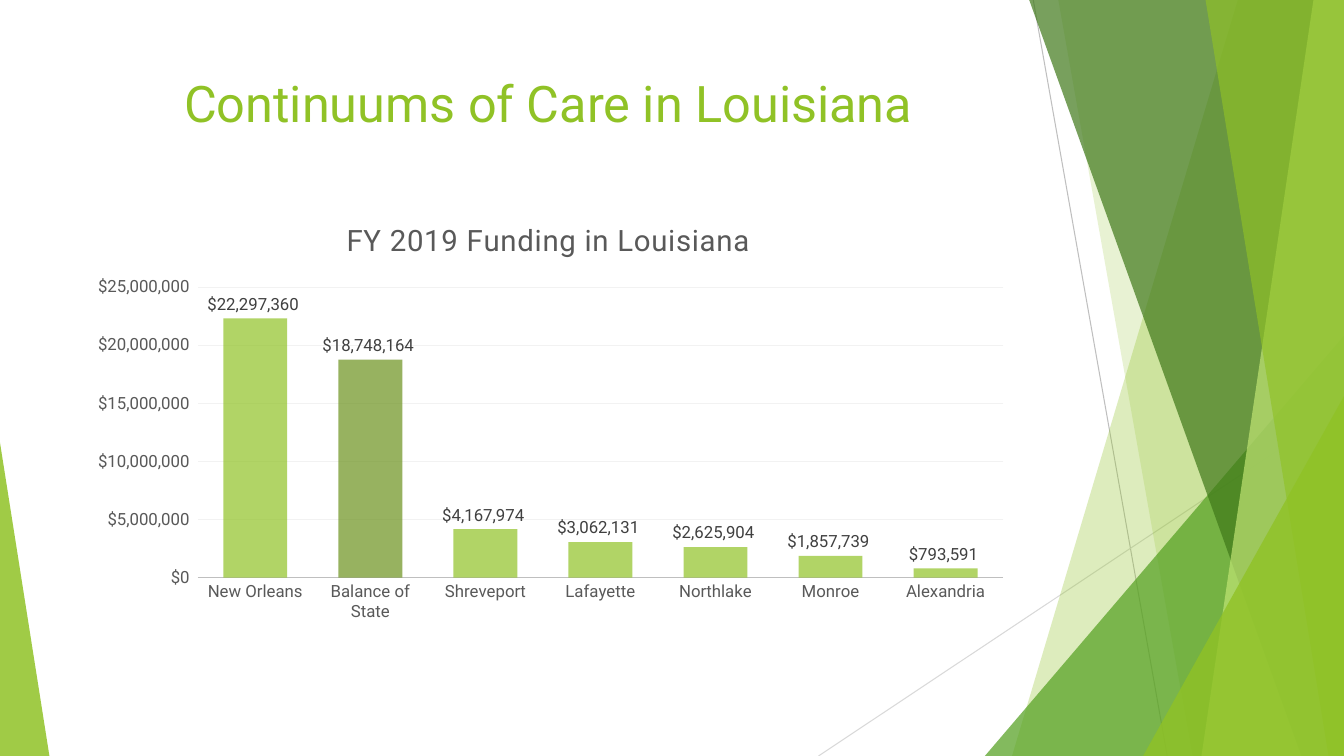
from pptx import Presentation
from pptx.chart.data import CategoryChartData
from pptx.dml.color import RGBColor
from pptx.enum.chart import XL_CHART_TYPE, XL_LABEL_POSITION, XL_TICK_MARK
from pptx.enum.shapes import MSO_CONNECTOR, MSO_SHAPE
from pptx.enum.text import MSO_ANCHOR, PP_ALIGN
from pptx.oxml import parse_xml
from pptx.oxml.ns import nsdecls, qn
from pptx.oxml.xmlchemy import OxmlElement
from pptx.util import Inches, Pt

THEME = dict(
    font="Roboto", title_size=Pt(36), chart_title_size=Pt(21), label_size=Pt(12),
    lime="90C226", pale="C0E474", green="54A021", forest="3F7819", olive="6C921D",
    text="595959", value="404040", axis="BFBFBF", ray="D9D9D9", grid="F2F2F2",
)
MONEY = '"$"#,##0_);[Red]\\("$"#,##0\\)'

prs = Presentation()
prs.slide_width, prs.slide_height = Inches(13.333), Inches(7.5)
s = prs.slides.add_slide(prs.slide_layouts[5])


def at(x, y):
    return int(prs.slide_width * x / 100), int(prs.slide_height * y / 100)


def paint(fill, color, opacity):
    fill.solid()
    fill.fore_color.rgb = RGBColor.from_string(THEME[color])
    alpha = OxmlElement("a:alpha")
    alpha.set("val", str(opacity * 1000))
    fill._xPr.find(qn("a:solidFill"))[0].append(alpha)


rays = [((76.88, 0), (86.85, 100), "axis"), ((100, 53.73), (60.9, 100), "ray")]
for start, end, color in rays:
    ray = s.shapes.add_connector(MSO_CONNECTOR.STRAIGHT, *at(*start), *at(*end))
    ray.line.color.rgb = RGBColor.from_string(THEME[color])
    ray.line.width = Pt(0.75)
    ray._element.spPr.append(OxmlElement("a:effectLst"))

facets = [
    ("sheet", (92.1, 75.3), "lime", 30),
    ("sheet", (78.75, 88.73), "lime", 20),
    ("triangle", (73.28, 44.4, 26.72, 1), "green", 72),
    ("sheet", (76.58, 96.83), "forest", 70),
    ("sheet", (97.73, 89.4), "pale", 70),
    ("sheet", (89.7, 98.85), "lime", 65),
    ("triangle", (85.05, 52.4, 14.95, 1), "lime", 80),
    ("triangle", (0, 58.53, 3.68, 0), "lime", 85),
]
for kind, geometry, color, opacity in facets:
    if kind == "sheet":
        top, bottom = geometry
        fb = s.shapes.build_freeform(*at(top, 0))
        fb.add_line_segments([at(100, 0), at(100, 100), at(bottom, 100)], close=True)
        sp = fb.convert_to_shape()
    else:
        left, top, width, apex = geometry
        sp = s.shapes.add_shape(MSO_SHAPE.ISOSCELES_TRIANGLE, *at(left, top), *at(width, 100 - top))
        sp.adjustments[0] = apex
    paint(sp.fill, color, opacity)
    sp.line.fill.background()
    sp.shadow.inherit = False

title = s.shapes.title
title.left, title.top = at(5.55, 8.93)
title.width, title.height = at(70.5, 19.2)
tf = title.text_frame
tf.text = "Continuums of Care in Louisiana"
tf.vertical_anchor = MSO_ANCHOR.TOP
p = tf.paragraphs[0]
p.alignment = PP_ALIGN.CENTER

funding = {
    "New Orleans": 22297360, "Balance of State": 18748164, "Shreveport": 4167974,
    "Lafayette": 3062131, "Northlake": 2625904, "Monroe": 1857739, "Alexandria": 793591,
}
data = CategoryChartData(number_format=MONEY)
data.categories = list(funding)
data.add_series("Series 1", list(funding.values()))
chart = s.shapes.add_chart(
    XL_CHART_TYPE.COLUMN_CLUSTERED, *at(5.55, 26.67), *at(70.5, 56.53), data).chart
chart.has_legend = False
chart.has_title = True
chart.chart_title.include_in_layout = False
heading = chart.chart_title.text_frame
heading.text = "FY 2019 Funding in Louisiana"
heading_run = heading.paragraphs[0].runs[0]
heading_run.font._rPr.set("spc", "50")

plot = chart.plots[0]
plot.gap_width, plot.overlap, plot.vary_by_categories = 80, 25, False
bars = plot.series[0]
paint(bars.format.fill, "lime", 70)
paint(bars.points[1].format.fill, "olive", 70)
labels = bars.data_labels
label_format = dict(show_value=True, position=XL_LABEL_POSITION.OUTSIDE_END,
                    number_format=MONEY, number_format_is_linked=False)
for name, value in label_format.items():
    setattr(labels, name, value)

cat, val = chart.category_axis, chart.value_axis
for axis in (cat, val):
    axis.major_tick_mark = axis.minor_tick_mark = XL_TICK_MARK.NONE
cat.format.line.color.rgb = RGBColor.from_string(THEME["axis"])
cat.format.line.width = Pt(1.25)
val.format.line.fill.background()
val.minimum_scale, val.maximum_scale, val.major_unit = 0, 25000000, 5000000
val.tick_labels.number_format = MONEY
val.tick_labels.number_format_is_linked = False
grid = val.major_gridlines.format.line
grid.color.rgb = RGBColor.from_string(THEME["grid"])
grid.width = Pt(0.75)

fonts = [
    (p.runs[0].font, "title_size", "lime"),
    (heading_run.font, "chart_title_size", "text"),
    (labels.font, "label_size", "value"),
    (cat.tick_labels.font, "label_size", "text"),
    (val.tick_labels.font, "label_size", "text"),
]
for font, size, color in fonts:
    for name, value in dict(name=THEME["font"], size=THEME[size], bold=False).items():
        setattr(font, name, value)
    font.color.rgb = RGBColor.from_string(THEME[color])

area = chart._chartSpace.chart.plotArea
for old in area.findall(qn("c:layout")):
    area.remove(old)
frame = dict(layoutTarget="inner", xMode="edge", yMode="edge", x=0.13, y=0.2, w=0.85, h=0.68)
parts = "".join(f'<c:{name} val="{value}"/>' for name, value in frame.items())
area.insert(0, parse_xml(
    f'<c:layout {nsdecls("c")}><c:manualLayout>{parts}</c:manualLayout></c:layout>'))

prs.save("out.pptx")
